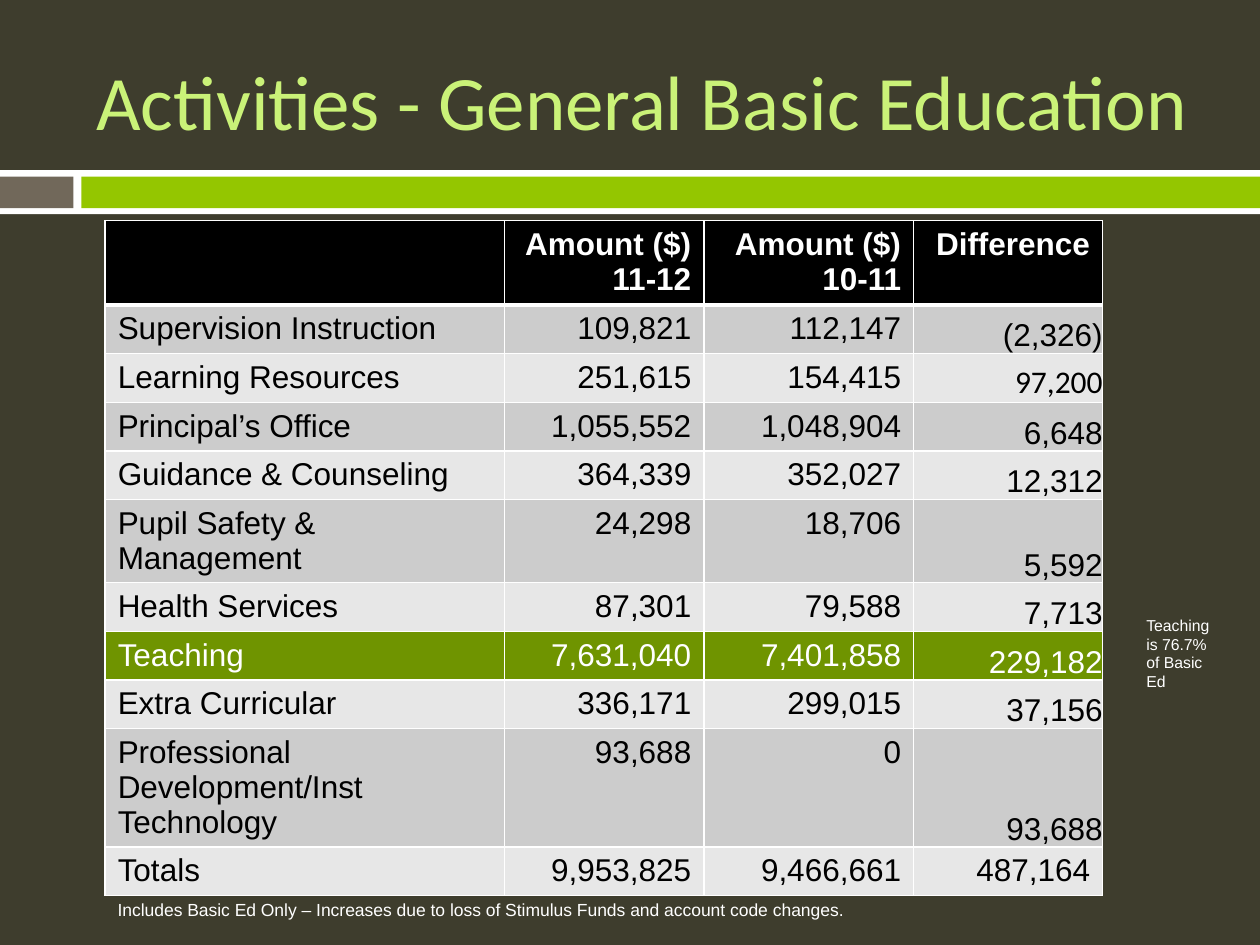
from lxml import etree
from pptx import Presentation
from pptx.dml.color import RGBColor
from pptx.enum.shapes import MSO_SHAPE
from pptx.enum.text import MSO_ANCHOR, MSO_AUTO_SIZE, PP_ALIGN
from pptx.oxml.ns import qn
from pptx.util import Cm, Pt

RECTANGLE = MSO_SHAPE.RECTANGLE
LEFT, RIGHT = PP_ALIGN.LEFT, PP_ALIGN.RIGHT
TOP, MIDDLE, BOTTOM = MSO_ANCHOR.TOP, MSO_ANCHOR.MIDDLE, MSO_ANCHOR.BOTTOM
NO_FIT, GROW = MSO_AUTO_SIZE.NONE, MSO_AUTO_SIZE.SHAPE_TO_FIT_TEXT

BACKGROUND = RGBColor(0x3E, 0x3D, 0x2D)
WHITE = RGBColor(0xFF, 0xFF, 0xFF)
BLACK = RGBColor(0x00, 0x00, 0x00)
TAUPE = RGBColor(0x71, 0x68, 0x5A)
LIME = RGBColor(0x94, 0xC6, 0x00)
PALE_LIME = RGBColor(0xCA, 0xF2, 0x78)
HIGHLIGHT = RGBColor(0x6F, 0x94, 0x00)
BANDS = (RGBColor(0xCC, 0xCC, 0xCC), RGBColor(0xE7, 0xE7, 0xE7))

HEADINGS = ("", "Amount ($)\n11-12", "Amount ($)\n10-11", "Difference")
ACTIVITIES = (
    ("Supervision Instruction", "109,821", "112,147", "(2,326)"),
    ("Learning Resources", "251,615", "154,415", "97,200"),
    ("Principal’s Office", "1,055,552", "1,048,904", "6,648"),
    ("Guidance & Counseling", "364,339", "352,027", "12,312"),
    ("Pupil Safety & Management", "24,298", "18,706", "5,592"),
    ("Health Services", "87,301", "79,588", "7,713"),
    ("Teaching", "7,631,040", "7,401,858", "229,182"),
    ("Extra Curricular", "336,171", "299,015", "37,156"),
    ("Professional Development/Inst Technology", "93,688", "0", "93,688"),
    ("Totals", "9,953,825", "9,466,661", "487,164"),
)
COLUMN_WIDTHS = (8.05, 4.02, 4.23, 3.81)
ROW_HEIGHT, TALL_ROW_HEIGHT = 0.98, 1.7
TALL_ROWS = (0, 9)


def write_text(frame, text, *, size, color, font="Arial", bold=False, align=LEFT):
    """Fill a text frame, one paragraph for each line of the text."""
    frame.text = text
    for paragraph in frame.paragraphs:
        paragraph.alignment = align
        for run in paragraph.runs:
            run.font.size = Pt(size)
            run.font.name = font
            run.font.bold = bold
            run.font.color.rgb = color


def add_cell_borders(cell, bottom_width):
    """Add white borders; must run before the cell's fill is set."""
    properties = cell._tc.get_or_add_tcPr()
    for side, width in (("L", 1), ("R", 1), ("T", 1), ("B", bottom_width)):
        border = etree.SubElement(properties, qn(f"a:ln{side}"), w=str(Pt(width)))
        fill = etree.SubElement(border, qn("a:solidFill"))
        etree.SubElement(fill, qn("a:srgbClr"), val=str(WHITE))


class SlideBuilder:
    def __init__(self, slide):
        self.slide = slide
        self.table_size = 18
        background = slide.background.fill
        background.solid()
        background.fore_color.rgb = BACKGROUND

    def band(self, left, top, width, height, color):
        band = self.slide.shapes.add_shape(
            RECTANGLE, Cm(left), Cm(top), Cm(width), Cm(height))
        band.shadow.inherit = False
        band.fill.solid()
        band.fill.fore_color.rgb = color
        band.line.fill.background()

    def title(self, text, left, top, width, height):
        title = self.slide.shapes.title
        title.left, title.top = Cm(left), Cm(top)
        title.width, title.height = Cm(width), Cm(height)
        frame = title.text_frame
        write_text(frame, text, size=44, color=PALE_LIME, font="Calibri")
        frame.auto_size = NO_FIT
        frame.vertical_anchor = MIDDLE

    def note(self, text, left, top, width, height, size):
        box = self.slide.shapes.add_textbox(
            Cm(left), Cm(top), Cm(width), Cm(height))
        frame = box.text_frame
        frame.word_wrap = True
        frame.auto_size = GROW
        write_text(frame, text, size=size, color=WHITE)

    def cell(self, cell, text, fill, *, bottom_border=1, flush=False, **text_format):
        add_cell_borders(cell, bottom_border)
        cell.fill.solid()
        cell.fill.fore_color.rgb = fill
        cell.vertical_anchor = BOTTOM if flush else TOP
        if flush:
            cell.margin_left = cell.margin_right = 0
            cell.margin_top = cell.margin_bottom = 0
        write_text(cell.text_frame, text, size=self.table_size, **text_format)

    def activity_table(self, left, top):
        heights = [TALL_ROW_HEIGHT if row in TALL_ROWS else ROW_HEIGHT
                   for row in range(len(ACTIVITIES) + 1)]
        table = self.slide.shapes.add_table(
            len(heights), len(COLUMN_WIDTHS), Cm(left), Cm(top),
            Cm(sum(COLUMN_WIDTHS)), Cm(sum(heights))).table
        for column, width in zip(table.columns, COLUMN_WIDTHS):
            column.width = Cm(width)
        for row, height in zip(table.rows, heights):
            row.height = Cm(height)

        for column, heading in enumerate(HEADINGS):
            self.cell(table.cell(0, column), heading, BLACK, bottom_border=3,
                      color=WHITE, bold=True, align=RIGHT)
        for index, activity in enumerate(ACTIVITIES):
            name = activity[0]
            highlighted = name == "Teaching"
            for column, value in enumerate(activity):
                difference = column == len(activity) - 1
                calibri = difference and name == "Learning Resources"
                self.cell(
                    table.cell(index + 1, column), value,
                    HIGHLIGHT if highlighted else BANDS[index % 2],
                    flush=difference and name != "Totals",
                    color=WHITE if highlighted else BLACK,
                    font="Calibri" if calibri else "Arial",
                    align=RIGHT if column else LEFT)


def main():
    presentation = Presentation()
    presentation.slide_width, presentation.slide_height = Cm(25.4), Cm(19.05)
    title_only = presentation.slide_layouts[5]
    builder = SlideBuilder(presentation.slides.add_slide(title_only))

    builder.band(0, 3.43, 25.4, 0.89, WHITE)
    builder.band(0, 3.56, 1.48, 0.64, TAUPE)
    builder.band(1.64, 3.56, 23.76, 0.64, LIME)
    builder.title("Activities - General Basic Education", 1.69, 0.64, 22.66, 2.75)
    builder.activity_table(2.12, 4.45)
    builder.note("Includes Basic Ed Only – Increases due to loss of Stimulus Funds "
                 "and account code changes.", 2.12, 17.99, 20.11, 0.68, size=10)
    builder.note("Teaching is 76.7% of Basic Ed", 22.86, 12.28, 1.9, 1.8, size=9)

    presentation.save("out.pptx")


if __name__ == "__main__":
    main()
